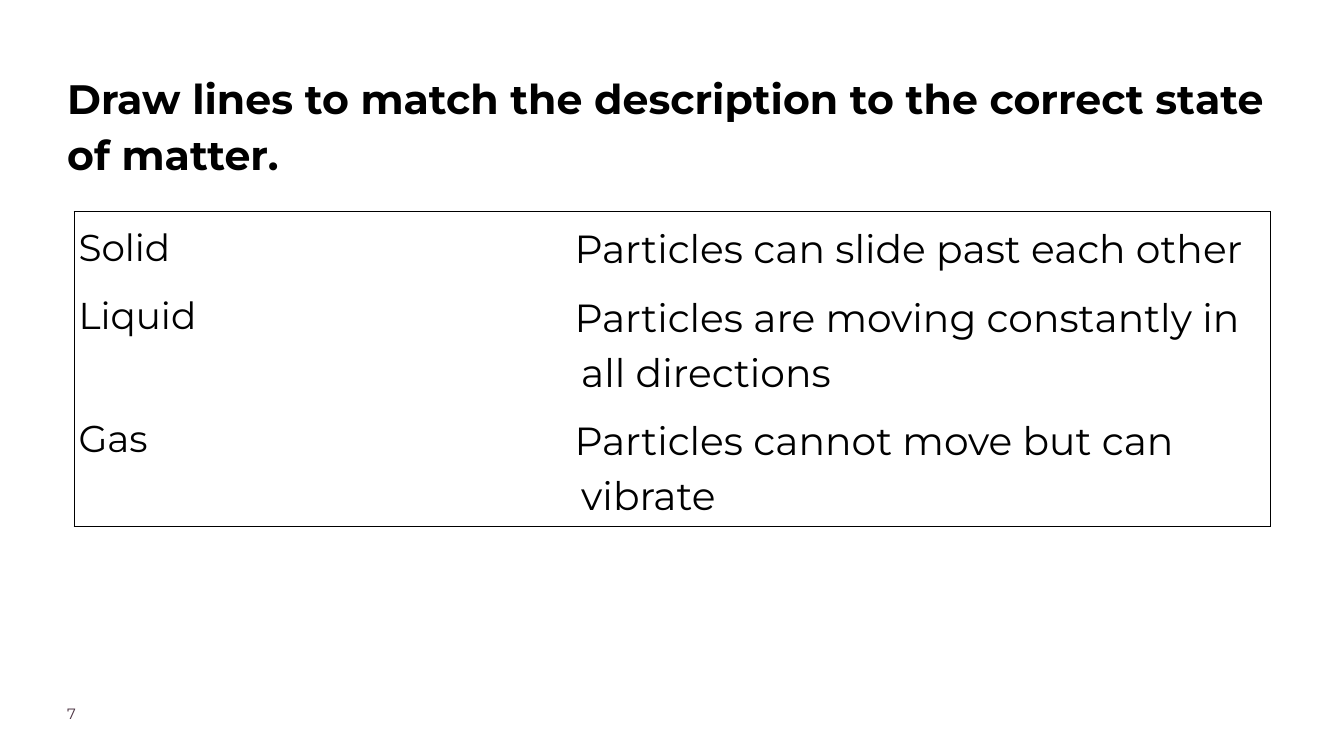
from lxml import etree
from pptx import Presentation
from pptx.dml.color import RGBColor
from pptx.enum.text import MSO_ANCHOR, PP_ALIGN
from pptx.oxml.ns import qn
from pptx.util import Inches, Pt

TOP = MSO_ANCHOR.TOP
LEFT = PP_ALIGN.LEFT
BLACK = RGBColor(0x00, 0x00, 0x00)
PLUM = RGBColor(0x4B, 0x32, 0x41)
FACE = "Montserrat"

STATES = [
    ("Solid", "Particles can slide past each other"),
    ("Liquid", "Particles are moving constantly in all directions"),
    ("Gas", "Particles cannot move but can vibrate"),
]
COLS = [4.87, 2.36, 10.57]
ROWS = [1.02, 1.83, 1.83]


class Page:
    def __init__(self, deck):
        self.slide = deck.slides.add_slide(deck.slide_layouts[5])
        self.shapes = self.slide.shapes

    def put(self, frame, text, size, color=BLACK, bold=False, space=1.0):
        para = frame.paragraphs[0]
        para.text = text
        para.alignment = LEFT
        para.line_spacing = space
        style = {"name": FACE, "size": Pt(size), "bold": bold}
        for key, value in style.items():
            setattr(para.font, key, value)
        para.font.color.rgb = color
        return para

    def clear(self, frame):
        style = {"margin_left": 0, "margin_top": 0, "margin_right": 0,
                 "margin_bottom": 0, "word_wrap": True, "vertical_anchor": TOP}
        for key, value in style.items():
            setattr(frame, key, value)

    def title(self, text, box):
        shape = self.shapes.title
        for key, value in zip(("left", "top", "width", "height"), box):
            setattr(shape, key, Inches(value))
        self.clear(shape.text_frame)
        self.put(shape.text_frame, text, 44, bold=True, space=1.15)

    def label(self, text, box):
        frame = self.shapes.add_textbox(*map(Inches, box)).text_frame
        self.clear(frame)
        self.put(frame, text, 16, PLUM)

    def edge(self, cell, side, drawn):
        line = etree.SubElement(cell._tc.get_or_add_tcPr(), qn(f"a:ln{side}"))
        line.set("w", str(Pt(1)))
        if drawn:
            fill = etree.SubElement(line, qn("a:solidFill"))
            etree.SubElement(fill, qn("a:srgbClr")).set("val", str(BLACK))
        else:
            etree.SubElement(line, qn("a:noFill"))

    def table(self, left, top):
        box = map(Inches, (left, top, sum(COLS), sum(ROWS)))
        table = self.shapes.add_table(len(ROWS), len(COLS), *box).table
        table.first_row = table.horz_banding = False
        for col, width in zip(table.columns, COLS):
            col.width = Inches(width)
        for row, height in zip(table.rows, ROWS):
            row.height = Inches(height)

        # Outer frame only
        for r in range(len(ROWS)):
            for c in range(len(COLS)):
                cell = table.cell(r, c)
                cell.margin_left = cell.margin_right = Inches(0.07)
                cell.margin_top = cell.margin_bottom = Inches(0.1)
                sides = {"L": c == 0, "R": c == len(COLS) - 1,
                         "T": r == 0, "B": r == len(ROWS) - 1}
                for side, drawn in sides.items():
                    self.edge(cell, side, drawn)
                cell.fill.background()

        # States on the left, hanging descriptions on the right
        for r, (state, note) in enumerate(STATES):
            self.put(table.cell(r, 0).text_frame, state, 40, space=1.15)
            para = self.put(table.cell(r, 2).text_frame, note, 42, space=1.15)
            props = para._p.get_or_add_pPr()
            props.set("marL", str(Inches(0.25)))
            props.set("indent", str(Inches(-0.1)))


def main():
    deck = Presentation()
    deck.slide_width = Inches(20)
    deck.slide_height = Inches(11.25)
    page = Page(deck)
    page.title("Draw lines to match the description to the correct state of matter.",
               (1, 0.98, 17.99, 1.78))
    page.label("7", (1, 10.48, 1.57, 0.39))
    page.table(1.1, 3.15)
    deck.save("out.pptx")


if __name__ == "__main__":
    main()
